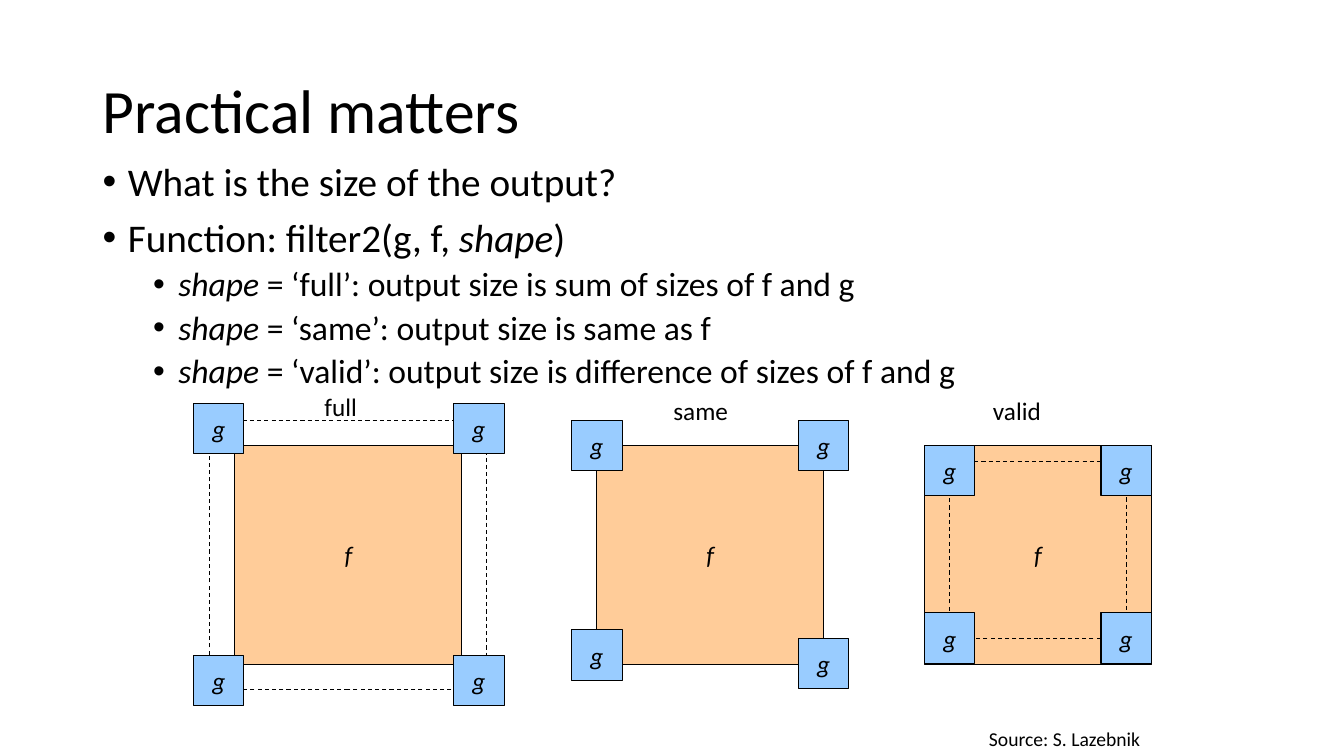
"""Build the slide on the output sizes of a filtered image."""
from lxml.etree import SubElement
from pptx import Presentation
from pptx.dml.color import RGBColor
from pptx.enum.dml import MSO_LINE
from pptx.enum.shapes import MSO_SHAPE
from pptx.enum.text import MSO_ANCHOR, MSO_AUTO_SIZE, PP_ALIGN
from pptx.oxml.ns import qn
from pptx.util import Inches, Pt

TITLE = "Practical matters"
BULLETS = [
    (0, [("What is the size of the output?", False)]),
    (0, [("Function: filter2(g, f, ", False), ("shape", True), (")", False)]),
    (1, [("shape", True), (" = ‘full’: output size is sum of sizes of f and g", False)]),
    (1, [("shape", True), (" = ‘same’: output size is same as f", False)]),
    (1, [("shape", True), (" = ‘valid’: output size is difference of sizes of f and g", False)]),
]
LEVELS = [
    {"size": 28, "margin": 0.25, "before": 10},
    {"size": 24, "margin": 0.75, "before": 5},
]
HANGING = 0.25
IMAGE_TOP, IMAGE_WIDTH, IMAGE_HEIGHT = 4.42, 2.25, 2.17
FILTER_SIZE = 0.5
DIAGRAMS = [
    {"image_left": 2.33, "columns": (1.92, 4.5), "tops": (4, 4), "bottoms": (6.5, 6.5),
     "under": (2.08, 4.17, 2.75, 2.67)},
    {"image_left": 5.92, "columns": (5.67, 7.92), "tops": (4.17, 4.17), "bottoms": (6.25, 6.33)},
    {"image_left": 9.17, "columns": (9.17, 10.92), "tops": (4.42, 4.42), "bottoms": (6.08, 6.08),
     "over": (9.42, 4.58, 1.75, 1.75)},
]
LABELS = [
    ("full", (3.12, 3.83, 0.53, 0.4), 18),
    ("same", (6.58, 3.87, 0.75, 0.4), 18),
    ("valid", (9.75, 3.87, 0.68, 0.4), 18),
    ("Source: S. Lazebnik", (9.71, 7.16, 1.71, 0.34), 14),
]
BLACK, WHITE, ORANGE, BLUE = "000000", "FFFFFF", "FFCC99", "99CCFF"


def color(value):
    return RGBColor.from_string(value)


def add_span(para, text, size, italic=False):
    span = para.add_run()
    span.text = text
    formats = {"name": "Calibri", "size": Pt(size), "italic": italic}
    for name, value in formats.items():
        setattr(span.font, name, value)
    span.font.color.rgb = color(BLACK)


def add_text_box(page, place, **formats):
    frame = page.shapes.add_textbox(*map(Inches, place)).text_frame
    for name, value in formats.items():
        setattr(frame, name, value)
    return frame


def add_box(page, place, fill=None, letter="", dashed=False):
    box = page.shapes.add_shape(MSO_SHAPE.RECTANGLE, *map(Inches, place))
    box.shadow.inherit = False
    if fill:
        box.fill.solid()
        box.fill.fore_color.rgb = color(fill)
    else:
        box.fill.background()
    box.line.color.rgb = color(BLACK)
    box.line.width = Pt(0.75)
    if dashed:
        box.line.dash_style = MSO_LINE.DASH
    if letter:
        frame = box.text_frame
        frame.word_wrap = False
        frame.vertical_anchor = MSO_ANCHOR.MIDDLE
        frame.paragraphs[0].alignment = PP_ALIGN.CENTER
        add_span(frame.paragraphs[0], letter, 18, italic=True)


def add_diagram(page, diagram):
    if "under" in diagram:
        add_box(page, diagram["under"], WHITE, dashed=True)
    add_box(page, (diagram["image_left"], IMAGE_TOP, IMAGE_WIDTH, IMAGE_HEIGHT), ORANGE, "f")
    if "over" in diagram:
        add_box(page, diagram["over"], dashed=True)
    for row in ("tops", "bottoms"):
        for left, top in zip(diagram["columns"], diagram[row]):
            add_box(page, (left, top, FILTER_SIZE, FILTER_SIZE), BLUE, "g")


def add_bullets(page):
    frame = add_text_box(page, (0.92, 1.56, 11.5, 5.94), word_wrap=True)
    for index, (level, spans) in enumerate(BULLETS):
        para = frame.add_paragraph() if index else frame.paragraphs[0]
        style = LEVELS[level]
        para.level = level
        para.line_spacing = 0.9
        para.space_before = Pt(style["before"] if index else 0)
        properties = para._p.get_or_add_pPr()
        properties.set("marL", str(Inches(style["margin"])))
        properties.set("indent", str(-Inches(HANGING)))
        SubElement(properties, qn("a:buFont"), typeface="Arial")
        SubElement(properties, qn("a:buChar"), char="•")
        for text, italic in spans:
            add_span(para, text, style["size"], italic)


def main():
    deck = Presentation()
    deck.slide_width, deck.slide_height = Inches(13.33), Inches(7.5)
    page = deck.slides.add_slide(deck.slide_layouts[6])
    title = add_text_box(page, (0.92, 0.4, 11.5, 1.45),
                         word_wrap=True, vertical_anchor=MSO_ANCHOR.MIDDLE)
    title.paragraphs[0].line_spacing = 0.9
    add_span(title.paragraphs[0], TITLE, 44)
    add_bullets(page)
    for diagram in DIAGRAMS:
        add_diagram(page, diagram)
    for text, place, size in LABELS:
        frame = add_text_box(page, place, word_wrap=False,
                             auto_size=MSO_AUTO_SIZE.SHAPE_TO_FIT_TEXT)
        add_span(frame.paragraphs[0], text, size)
    deck.save("out.pptx")


if __name__ == "__main__":
    main()
